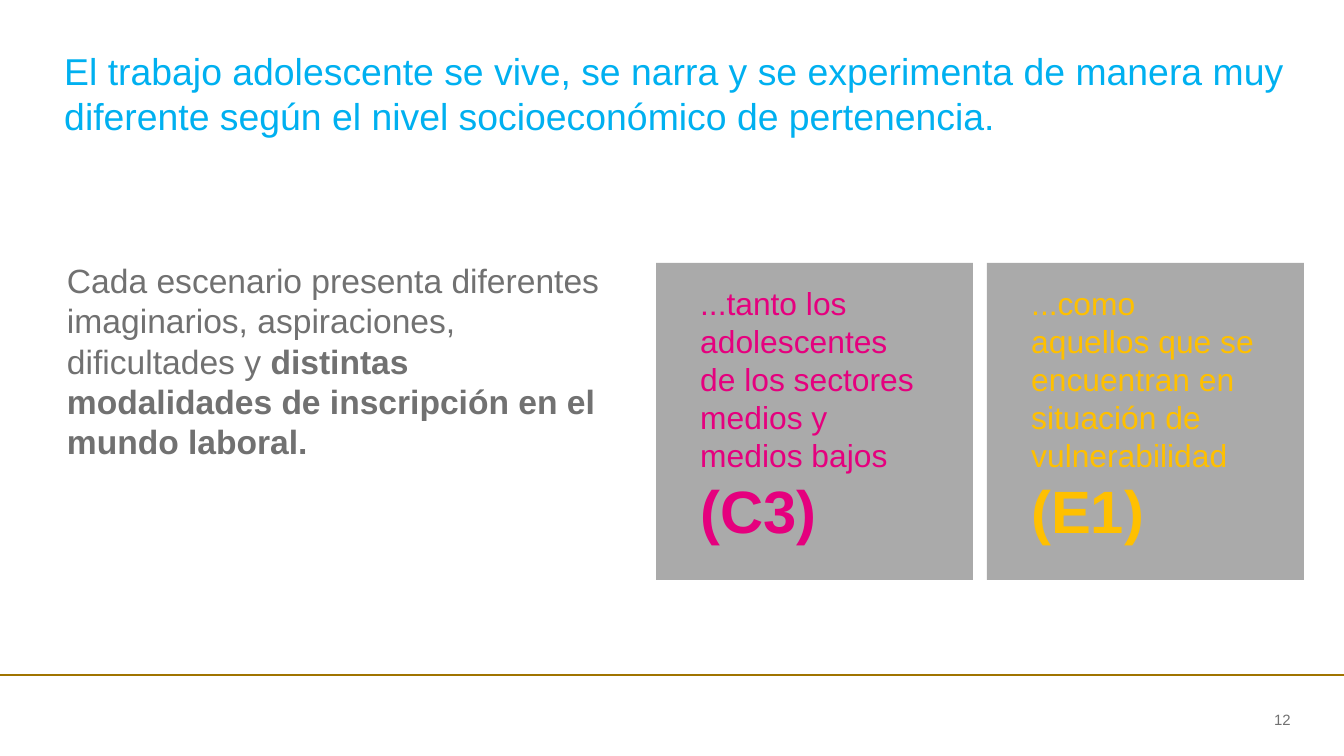
"""Builds a slide comparing adolescent work across two socioeconomic levels."""
from dataclasses import dataclass

import pptx
import pptx.dml.color
import pptx.enum.shapes
import pptx.enum.text
import pptx.oxml
import pptx.oxml.ns
import pptx.util

EMU_PER_PX = 914400 / 134.4


@dataclass(frozen=True)
class Theme:
    """Colours, font and type sizes of the slide."""
    font: str = "Arial"
    title: str = "00B0F0"
    body: str = "717171"
    panel: str = "AAAAAA"
    rule: str = "A07400"
    middle_level: str = "E5007E"
    vulnerable_level: str = "FFC000"
    title_size: int = 20
    body_size: int = 18
    panel_size: int = 17
    code_size: int = 32
    number_size: int = 8
    rule_width: float = 1.5


THEME = Theme()


def px(length):
    """Turn whole pixels into EMU."""
    return pptx.util.Emu(round(length * EMU_PER_PX))


def rgb(color):
    """Turn a hexadecimal string into a colour."""
    return pptx.dml.color.RGBColor.from_string(color)


def write_runs(text_frame, runs, color, align=pptx.enum.text.PP_ALIGN.LEFT):
    """Fill a text frame with one paragraph of (text, size, bold) runs."""
    text_frame.word_wrap = True
    text_frame.vertical_anchor = pptx.enum.text.MSO_ANCHOR.TOP
    paragraph = text_frame.paragraphs[0]
    paragraph.alignment = align
    for text, size, bold in runs:
        run = paragraph.add_run()
        run.text = text
        run.font.name = THEME.font
        run.font.size = pptx.util.Pt(size)
        run.font.bold = bold
        run.font.color.rgb = rgb(color)


def add_text(slide, box, runs, color, **options):
    """Add a text box and return its text frame."""
    text_frame = slide.shapes.add_textbox(*map(px, box)).text_frame
    write_runs(text_frame, runs, color, **options)
    return text_frame


def add_rectangle(shapes, box):
    """Add a plain grey rectangle."""
    shape = shapes.add_shape(pptx.enum.shapes.MSO_SHAPE.RECTANGLE, *map(px, box))
    shape.shadow.inherit = False
    shape.fill.solid()
    shape.fill.fore_color.rgb = rgb(THEME.panel)
    shape.line.fill.background()
    return shape


def add_panel(slide, left, text, code, color):
    """Add a grouped square panel holding a description and its level code."""
    group = slide.shapes.add_group_shape()
    add_rectangle(group.shapes, (left, 263, 317, 317))
    label = add_rectangle(group.shapes, (left + 31, 277, 257, 278))
    runs = [(text, THEME.panel_size, False), (code, THEME.code_size, True)]
    write_runs(label.text_frame, runs, color)


def add_rule(slide, top):
    """Add the horizontal rule across the slide."""
    connector = slide.shapes.add_connector(
        pptx.enum.shapes.MSO_CONNECTOR.STRAIGHT, px(0), px(top), px(1344), px(top))
    connector.line.color.rgb = rgb(THEME.rule)
    connector.line.width = pptx.util.Pt(THEME.rule_width)
    properties = connector._element.spPr
    properties.append(pptx.oxml.parse_xml(
        f"<a:effectLst {pptx.oxml.ns.nsdecls('a')}/>"))


def main():
    """Build and save the slide."""
    presentation = pptx.Presentation()
    presentation.slide_width = px(1344)
    presentation.slide_height = px(756)
    slide = presentation.slides.add_slide(presentation.slide_layouts[6])

    add_rule(slide, 675)
    add_text(slide, (1196, 704, 108, 22), [("12", THEME.number_size, False)],
             THEME.body, align=pptx.enum.text.PP_ALIGN.RIGHT)
    body = add_text(slide, (67, 260, 555, 203), [
        ("Cada escenario presenta diferentes imaginarios, aspiraciones, "
         "dificultades y ", THEME.body_size, False),
        ("distintas modalidades de inscripción en el mundo laboral.",
         THEME.body_size, True)], THEME.body)
    body.margin_left = body.margin_right = 0
    body.margin_top = body.margin_bottom = 0
    add_text(slide, (51, 42, 1269, 104), [
        ("El trabajo adolescente se vive, se narra y se experimenta de manera muy "
         "diferente según el nivel socioeconómico de pertenencia.",
         THEME.title_size, False)], THEME.title)

    panels = [
        ("...tanto los adolescentes de los sectores medios y medios bajos ",
         "(C3)", THEME.middle_level),
        ("...como aquellos que se encuentran en situación de vulnerabilidad ",
         "(E1)", THEME.vulnerable_level),
    ]
    for index, (text, code, color) in enumerate(panels):
        add_panel(slide, 656 + 331 * index, text, code, color)

    presentation.save("out.pptx")


if __name__ == "__main__":
    main()
